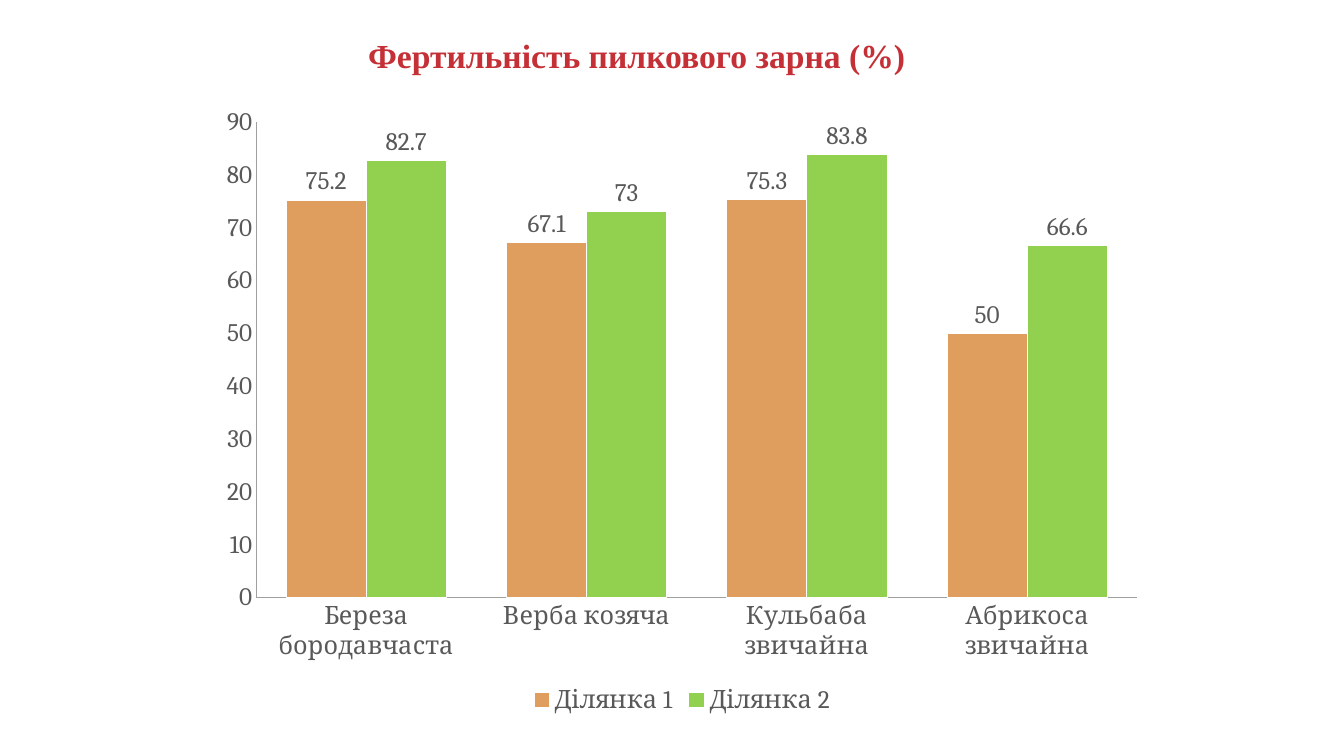
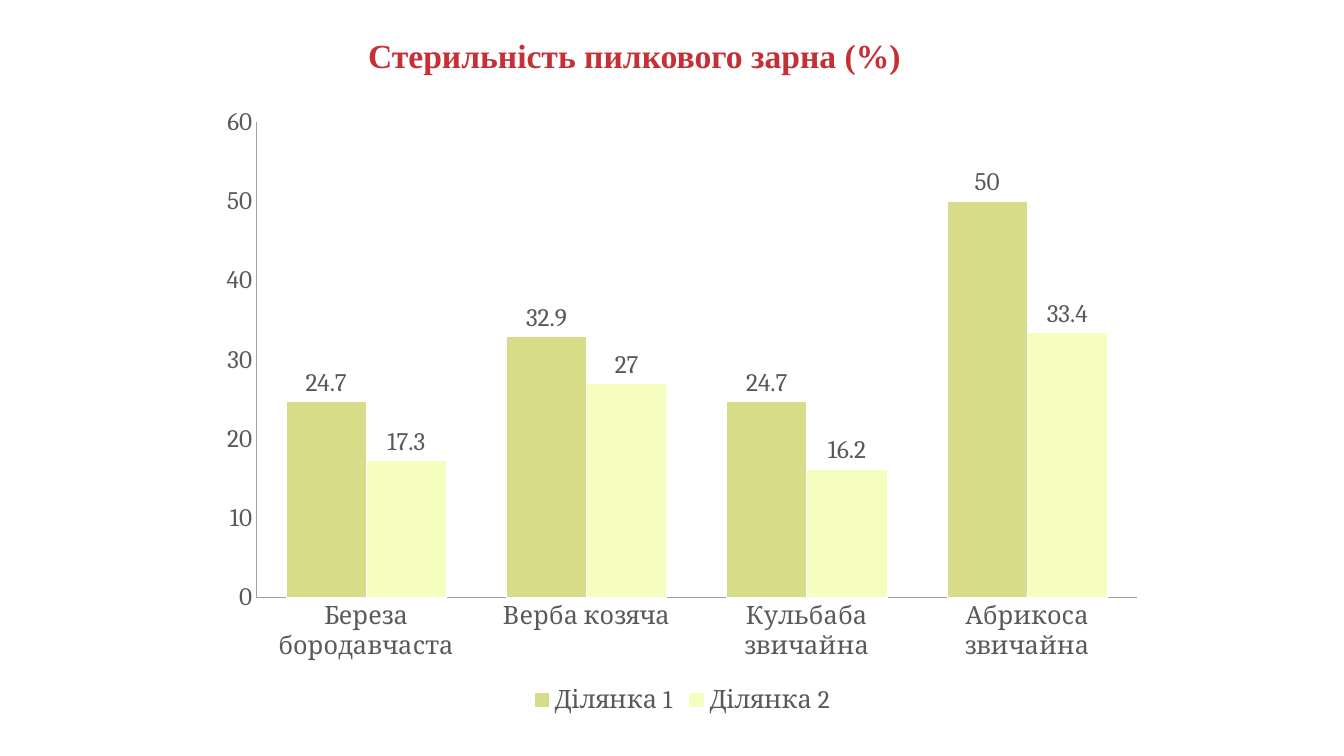
from dataclasses import dataclass

from pptx import Presentation
from pptx.chart.data import CategoryChartData
from pptx.dml.color import RGBColor
from pptx.enum.chart import (XL_CHART_TYPE, XL_LABEL_POSITION,
                             XL_LEGEND_POSITION, XL_TICK_MARK)
from pptx.enum.text import MSO_ANCHOR, PP_ALIGN
from pptx.util import Inches, Pt


@dataclass(frozen=True)
class Theme:
    title_color: RGBColor = RGBColor.from_string("C53036")
    text_color: RGBColor = RGBColor.from_string("595959")
    axis_color: RGBColor = RGBColor.from_string("A0A0A0")
    bar_outline: RGBColor = RGBColor.from_string("FFFFFF")
    title_font: str = "Times New Roman"
    chart_font: str = "Cambria"
    title_size: Pt = Pt(24)
    chart_size: Pt = Pt(18)


PLANTS = ["Береза бородавчаста", "Верба козяча",
          "Кульбаба звичайна", "Абрикоса звичайна"]
PLOTS = ["Ділянка 1", "Ділянка 2"]


class PollenDeck:
    def __init__(self, theme):
        self.theme = theme
        self.presentation = Presentation()
        self.presentation.slide_width = Inches(13.33)
        self.presentation.slide_height = Inches(7.5)
        self.slide = None

    def add_slide(self, heading):
        title_only = self.presentation.slide_layouts[5]
        self.slide = self.presentation.slides.add_slide(title_only)
        title = self.slide.shapes.title
        title.left, title.top = Inches(3.55), Inches(0.3)
        title.width, title.height = Inches(6.13), Inches(0.5)
        title.text_frame.text = heading
        title.text_frame.vertical_anchor = MSO_ANCHOR.TOP
        paragraph = title.text_frame.paragraphs[0]
        paragraph.alignment = PP_ALIGN.LEFT
        font = paragraph.font
        font.name, font.size, font.bold = (
            self.theme.title_font, self.theme.title_size, True)
        font.color.rgb = self.theme.title_color

    def add_column_chart(self, percentages, bar_colors, maximum):
        chart_data = CategoryChartData()
        chart_data.categories = PLANTS
        for plot_name, values in zip(PLOTS, percentages):
            chart_data.add_series(plot_name, values)
        chart = self.slide.shapes.add_chart(
            XL_CHART_TYPE.COLUMN_CLUSTERED, Inches(2.06), Inches(0.94),
            Inches(9.41), Inches(6.2), chart_data).chart
        chart.has_title = False
        chart.font.name = self.theme.chart_font
        chart.font.size = self.theme.chart_size
        chart.font.color.rgb = self.theme.text_color
        chart.has_legend = True
        chart.legend.position = XL_LEGEND_POSITION.BOTTOM
        chart.legend.include_in_layout = False
        self.style_axes(chart, maximum)
        self.style_bars(chart.plots[0], bar_colors)

    def style_axes(self, chart, maximum):
        for axis in (chart.category_axis, chart.value_axis):
            axis.major_tick_mark = axis.minor_tick_mark = XL_TICK_MARK.NONE
            axis.has_major_gridlines = False
            axis.format.line.color.rgb = self.theme.axis_color
            axis.format.line.width = Pt(0.75)
        chart.value_axis.minimum_scale = 0
        chart.value_axis.maximum_scale = maximum
        chart.value_axis.major_unit = 10

    def style_bars(self, plot, bar_colors):
        plot.gap_width = 75
        plot.overlap = 0
        plot.vary_by_categories = False
        plot.has_data_labels = True
        plot.data_labels.show_value = True
        plot.data_labels.position = XL_LABEL_POSITION.OUTSIDE_END
        for series, color in zip(plot.series, bar_colors):
            series.format.fill.solid()
            series.format.fill.fore_color.rgb = RGBColor.from_string(color)
            series.format.line.color.rgb = self.theme.bar_outline
            series.format.line.width = Pt(0.75)


def main():
    deck = PollenDeck(Theme())
    deck.add_slide("Фертильність пилкового зарна (%)")
    deck.add_column_chart([(75.2, 67.1, 75.3, 50), (82.7, 73, 83.8, 66.6)],
                          ("DF9E5E", "92D050"), maximum=90)
    deck.add_slide("Стерильність пилкового зарна (%)")
    deck.add_column_chart([(24.7, 32.9, 24.7, 50), (17.3, 27, 16.2, 33.4)],
                          ("D7DC88", "F5FEBE"), maximum=60)
    deck.presentation.save("out.pptx")


if __name__ == "__main__":
    main()
